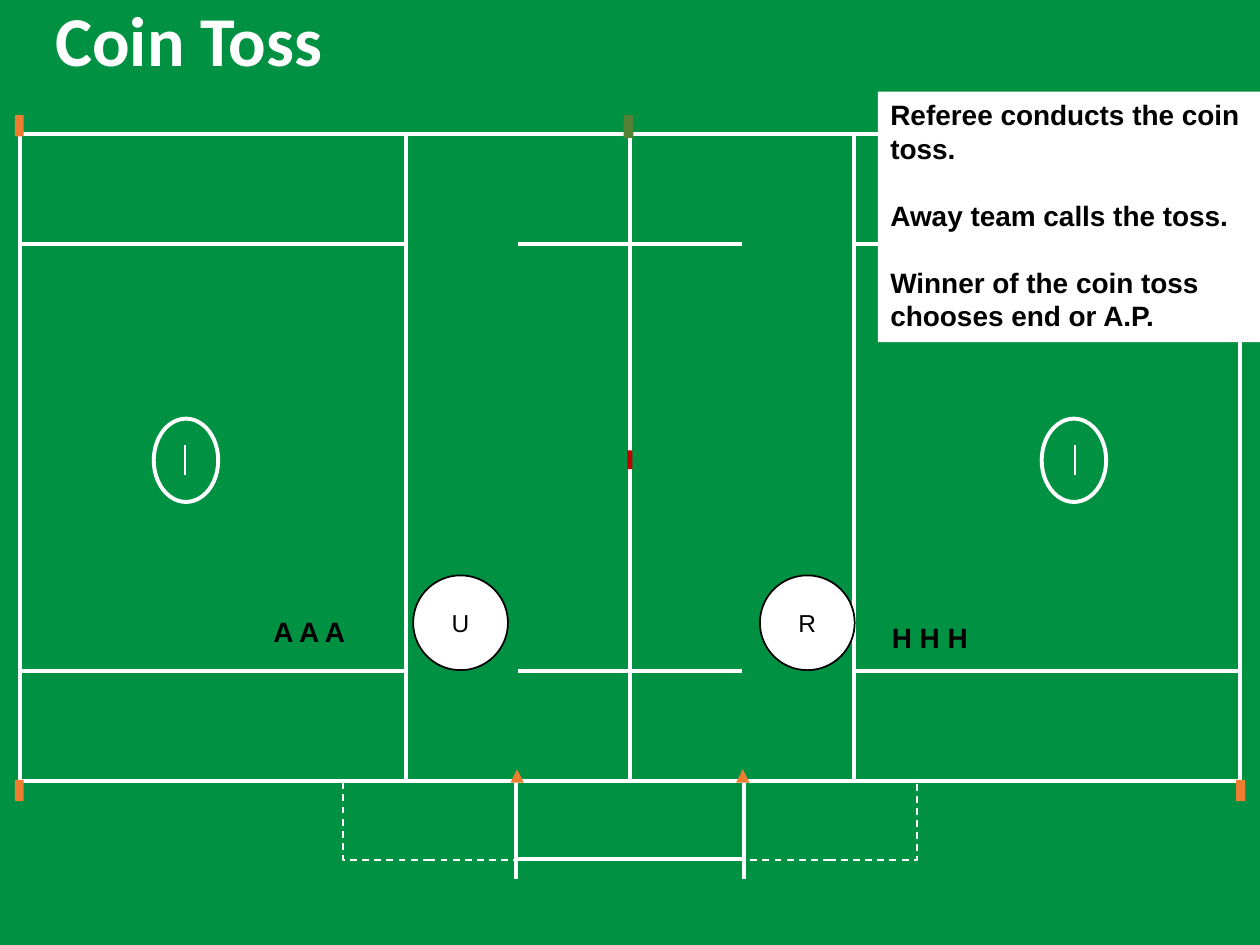
from pptx import Presentation
from pptx.dml.color import RGBColor
from pptx.enum.dml import MSO_LINE
from pptx.enum.shapes import MSO_CONNECTOR, MSO_SHAPE
from pptx.enum.text import MSO_ANCHOR, MSO_AUTO_SIZE, PP_ALIGN
from pptx.oxml.ns import qn
from pptx.util import Cm, Pt
from lxml.etree import SubElement

GREEN, WHITE, BLACK, ORANGE = "009242", "FFFFFF", "000000", "ED7D31"
DARK_GREEN, RED = "548135", "C00000"


def color(value):
    """Turn a hex string into a colour."""
    return RGBColor.from_string(value)


def add_figure(slide, kind, box, fill=None, line=None, weight=2.25):
    """Add a preset shape in a box given in centimetres."""
    shape = slide.shapes.add_shape(kind, *map(Cm, box))
    shape.shadow.inherit = False
    if fill:
        shape.fill.solid()
        shape.fill.fore_color.rgb = color(fill)
    else:
        shape.fill.background()
    if line:
        shape.line.color.rgb = color(line)
        shape.line.width = Pt(weight)
    else:
        shape.line.fill.background()
    return shape


def add_line(slide, start, end, weight=2.25):
    """Add a straight white marking between two points."""
    connector = slide.shapes.add_connector(
        MSO_CONNECTOR.STRAIGHT, *map(Cm, (*start, *end)))
    connector.line.color.rgb = color(WHITE)
    connector.line.width = Pt(weight)
    SubElement(connector._element.spPr, qn("a:effectLst"))


def write(paragraph, text, size, bold=False, ink=BLACK, font="Arial"):
    """Add one formatted run to a paragraph."""
    run = paragraph.add_run()
    run.text = text
    run.font.name = font
    run.font.size = Pt(size)
    run.font.bold = bold
    run.font.color.rgb = color(ink)


def add_half(slide, box, side):
    """Mark half of the field; side is -1 for left and 1 for right."""
    left, top, width, height = box
    half, band, middle = width / 2, 2.22, 4.52
    center = left + half

    def part(kind, outer, y, w, h, **style):
        x = center - outer if side < 0 else center + outer - w
        return add_figure(slide, kind, (x, top + y, w, h), **style)

    def mark(start, end, weight=2.25):
        points = [(center + side * x, top + y) for x, y in (start, end)]
        add_line(slide, *points, weight)

    rectangle = MSO_SHAPE.RECTANGLE
    part(rectangle, middle, 0, middle, height, line=WHITE)
    rows = (0, band, height - band, height)
    for upper, lower in zip(rows, rows[1:]):
        part(rectangle, half, upper, half - middle, lower - upper, line=WHITE)
    for y in (-0.38, height - 0.02) if side < 0 else (height - 0.02,):
        part(rectangle, half + 0.11, y, 0.18, 0.43, fill=ORANGE)
    bench = part(rectangle, 5.79, height + 0.03, 3.51, 1.57,
                 line=WHITE, weight=1)
    bench.line.dash_style = MSO_LINE.DASH
    part(MSO_SHAPE.ISOSCELES_TRIANGLE, 2.41, height - 0.23, 0.27, 0.27,
         fill=ORANGE)
    part(MSO_SHAPE.OVAL, 9.6, 5.74, 1.3, 1.68, line=WHITE)
    mark((8.97, 6.88), (8.97, 6.27), 1.5)
    mark((2.29, height + 1.98), (2.29, height + 0.05))
    for y in (band, height - band, height + 1.57):
        mark((0, y), (2.26, y))


def add_field(slide, box):
    """Draw both halves and the markers on the centre line."""
    for side in (-1, 1):
        add_half(slide, box, side)
    left, top, width, _ = box
    center = left + width / 2
    for x, y, w, h, fill in ((-0.13, -0.38, 0.2, 0.46, DARK_GREEN),
                             (-0.05, 6.38, 0.1, 0.38, RED)):
        add_figure(slide, MSO_SHAPE.RECTANGLE,
                   (center + x, top + y, w, h), fill=fill)


def add_title(slide, box, text):
    """Place and format the title placeholder."""
    title = slide.shapes.title
    title.left, title.top, title.width, title.height = map(Cm, box)
    frame = title.text_frame
    frame.auto_size = MSO_AUTO_SIZE.NONE
    frame.vertical_anchor = MSO_ANCHOR.MIDDLE
    paragraph = frame.paragraphs[0]
    paragraph.alignment = PP_ALIGN.LEFT
    paragraph.line_spacing = 0.9
    write(paragraph, text, 40, True, WHITE, "Calibri")


def add_official(slide, box, letter):
    """Add a circle that stands for an official."""
    circle = add_figure(slide, MSO_SHAPE.OVAL, box, WHITE, BLACK, 1)
    frame = circle.text_frame
    frame.vertical_anchor = MSO_ANCHOR.MIDDLE
    frame.paragraphs[0].alignment = PP_ALIGN.CENTER
    write(frame.paragraphs[0], letter, 14)


def add_team(slide, box, text):
    """Add the letters that stand for a team's players."""
    label = slide.shapes.add_textbox(*map(Cm, box))
    label.text_frame.word_wrap = True
    write(label.text_frame.paragraphs[0], text, 16, True)


def add_instructions(slide, box, texts):
    """Add the white panel with spaced instructions."""
    panel = add_figure(slide, MSO_SHAPE.RECTANGLE, box, WHITE)
    frame = panel.text_frame
    frame.word_wrap = True
    frame.vertical_anchor = MSO_ANCHOR.TOP
    for index, text in enumerate(texts):
        paragraph = frame.add_paragraph() if index else frame.paragraphs[0]
        paragraph.alignment = PP_ALIGN.LEFT
        if index:
            paragraph.space_before = Pt(19)
        write(paragraph, text, 16, True)


def main():
    """Build the coin toss slide."""
    presentation = Presentation()
    presentation.slide_width, presentation.slide_height = Cm(25.4), Cm(19.05)
    slide = presentation.slides.add_slide(presentation.slide_layouts[5])
    slide.background.fill.solid()
    slide.background.fill.fore_color.rgb = color(GREEN)
    add_field(slide, (0.41, 2.7, 24.58, 13.04))
    add_title(slide, (0.86, 0.58, 6.81, 0.61), "Coin Toss")
    for left, letter in ((8.33, "U"), (15.32, "R")):
        add_official(slide, (left, 11.6, 1.91, 1.91), letter)
    add_team(slide, (5.26, 12.27, 2.08, 0.94), "A A A")
    add_team(slide, (17.73, 12.38, 2.08, 0.94), "H H H")
    add_instructions(slide, (17.7, 1.85, 7.7, 5.05), (
        "Referee conducts the coin toss.",
        "Away team calls the toss.",
        "Winner of the coin toss chooses end or A.P."))
    presentation.save("out.pptx")


if __name__ == "__main__":
    main()
